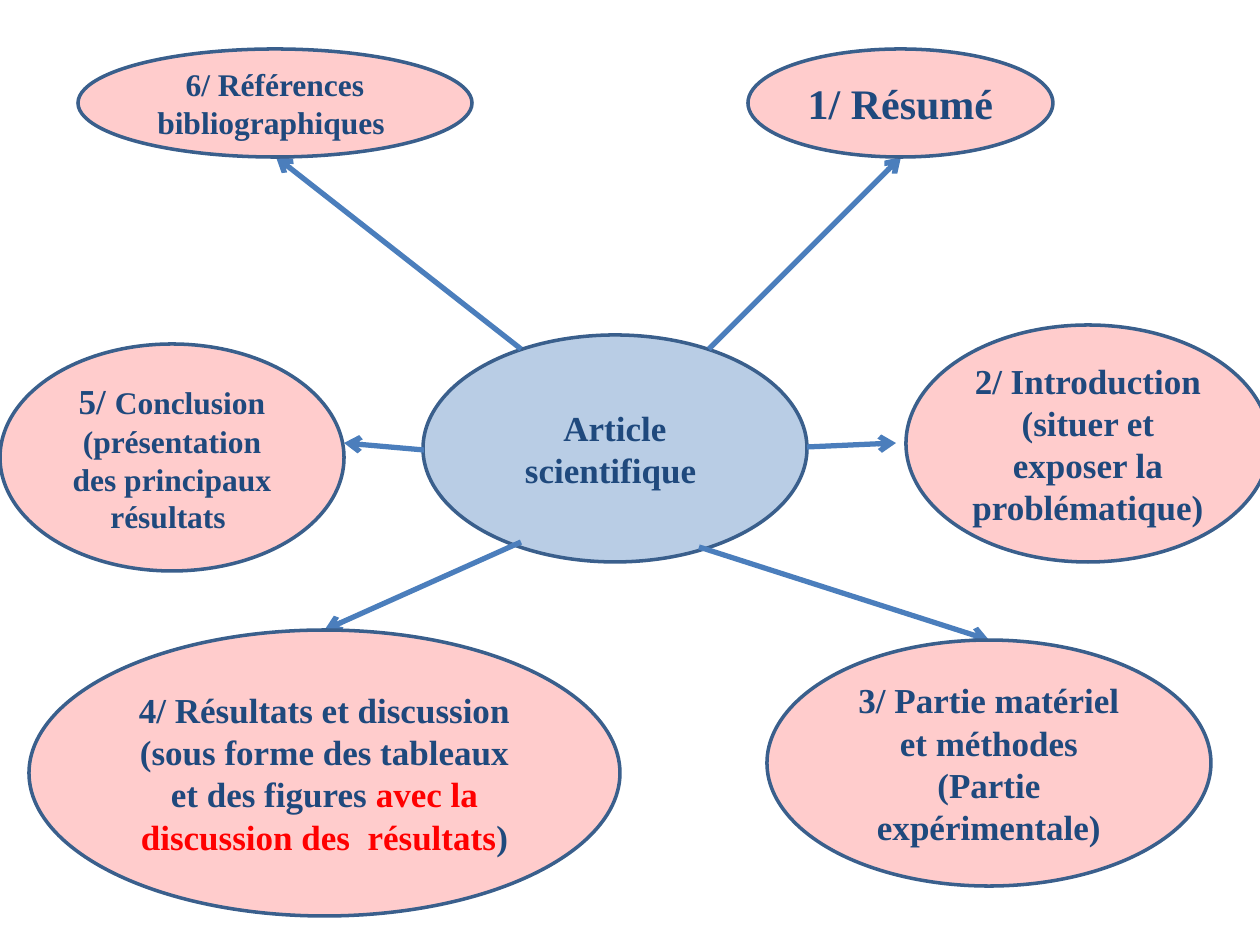
"""Build a slide that maps the six parts of a scientific article."""
from dataclasses import dataclass

import pptx
import pptx.dml.color
import pptx.enum.shapes
import pptx.enum.text
import pptx.oxml.ns
import pptx.util
from lxml import etree

RGB = pptx.dml.color.RGBColor
PINK = RGB(0xFF, 0xCC, 0xCC)
PALE = RGB(0xB9, 0xCD, 0xE5)
EDGE = RGB(0x3A, 0x5F, 0x8C)
BLUE = RGB(0x4B, 0x7E, 0xBC)
NAVY = RGB(0x1F, 0x49, 0x7D)
RED = RGB(0xFF, 0x00, 0x00)
FONT = "Times New Roman"
SCALE = 914400 / 126


@dataclass(frozen=True)
class Run:
    text: str
    size: int = 20
    color: RGB = NAVY


@dataclass(frozen=True)
class Oval:
    box: tuple[int, int, int, int]
    paras: list[list[Run]]
    fill: RGB = PINK


@dataclass(frozen=True)
class Topic:
    oval: Oval
    start: tuple[int, int]
    end: tuple[int, int]
    joined: bool = False


HUB = Oval((423, 335, 384, 227), [[Run("Article scientifique ")]], PALE)
TOPICS = [
    Topic(Oval((748, 49, 305, 108), [[Run("1/ Résumé", 24)]]),
          (709, 349), (901, 157)),
    Topic(Oval((906, 325, 364, 237),
               [[Run("2/ Introduction")],
                [Run("(situer et exposer la problématique)")]]),
          (807, 447), (896, 443)),
    Topic(Oval((767, 640, 444, 246),
               [[Run("3/ Partie matériel et méthodes (Partie expérimentale)")]]),
          (699, 547), (989, 640), True),
    Topic(Oval((29, 630, 591, 286),
               [[Run("4/ Résultats et discussion (sous forme des tableaux "
                     "et des figures "),
                 Run("avec la discussion des  résultats", color=RED),
                 Run(")")]]),
          (521, 542), (325, 630), True),
    Topic(Oval((0, 344, 344, 227),
               [[Run("5/ "),
                 Run("Conclusion (présentation des principaux résultats ", 18)]]),
          (424, 450), (344, 443)),
    Topic(Oval((78, 49, 394, 108),
               [[Run("6/ Références bibliographiques ", 18)]]),
          (521, 349), (276, 157)),
]


def px(value: int) -> int:
    return round(value * SCALE)


def draw_oval(slide, oval: Oval):
    kind = pptx.enum.shapes.MSO_SHAPE.OVAL
    shape = slide.shapes.add_shape(kind, *map(px, oval.box))
    shape.shadow.inherit = False
    shape.fill.solid()
    shape.fill.fore_color.rgb = oval.fill
    shape.line.color.rgb = EDGE
    shape.line.width = pptx.util.Pt(2)
    frame = shape.text_frame
    frame.word_wrap = True
    frame.vertical_anchor = pptx.enum.text.MSO_ANCHOR.MIDDLE
    for i, runs in enumerate(oval.paras):
        para = frame.add_paragraph() if i else frame.paragraphs[0]
        para.alignment = pptx.enum.text.PP_ALIGN.CENTER
        for item in runs:
            run = para.add_run()
            run.text = item.text
            run.font.name = FONT
            run.font.size = pptx.util.Pt(item.size)
            run.font.bold = True
            run.font.color.rgb = item.color
    return shape


def draw_arrow(slide, start: tuple[int, int], end: tuple[int, int]):
    kind = pptx.enum.shapes.MSO_CONNECTOR.STRAIGHT
    arrow = slide.shapes.add_connector(kind, *map(px, start + end))
    arrow.line.color.rgb = BLUE
    arrow.line.width = pptx.util.Pt(3)
    qn = pptx.oxml.ns.qn
    props = arrow.element.spPr
    etree.SubElement(props.find(qn("a:ln")), qn("a:tailEnd"), type="arrow")
    etree.SubElement(props, qn("a:effectLst"))
    return arrow


def main() -> None:
    deck = pptx.Presentation()
    deck.slide_width = pptx.util.Inches(10)
    deck.slide_height = pptx.util.Inches(7.5)
    slide = deck.slides.add_slide(deck.slide_layouts[6])
    draw_oval(slide, HUB)
    for topic in TOPICS:
        arrow = draw_arrow(slide, topic.start, topic.end)
        shape = draw_oval(slide, topic.oval)
        if topic.joined:
            arrow.end_connect(shape, 0)
    deck.save("out.pptx")


if __name__ == "__main__":
    main()
